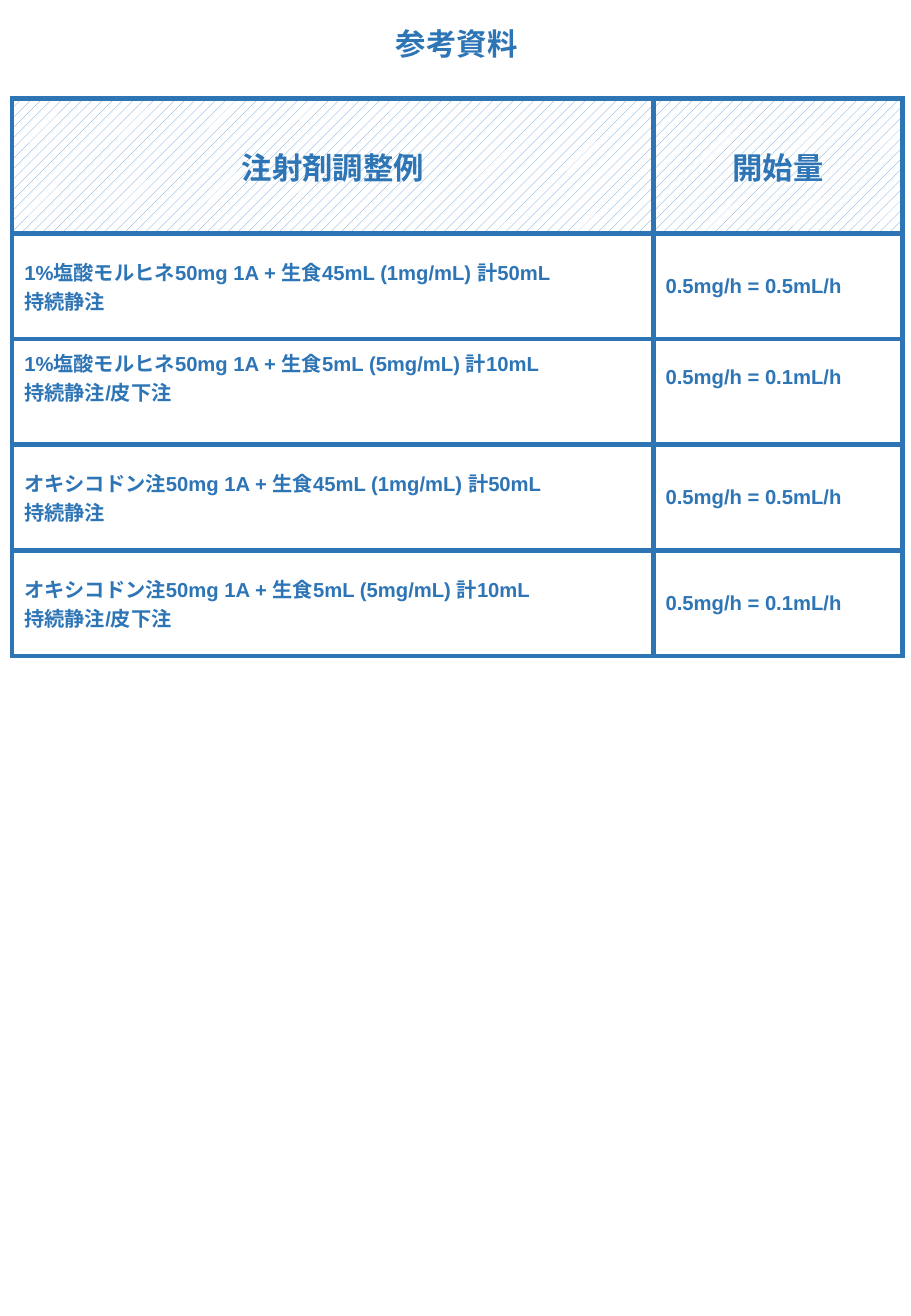
from dataclasses import dataclass

from lxml.etree import SubElement
from pptx import Presentation
from pptx.dml.color import RGBColor
from pptx.enum.dml import MSO_PATTERN
from pptx.enum.lang import MSO_LANGUAGE_ID
from pptx.enum.text import MSO_ANCHOR, PP_ALIGN
from pptx.oxml.ns import qn
from pptx.table import _Cell
from pptx.text.text import TextFrame
from pptx.util import Inches, Pt

COLORS = {"blue": "2E75B6", "hatch": "5B9BD5", "white": "FFFFFF"}
COLUMN_WIDTHS = (5.28, 2.05)
HEADER_HEIGHT, DOSE_HEIGHT = 1.11, 0.87
HEADINGS = ("注射剤調整例", "開始量")


@dataclass(frozen=True)
class Dosing:
    mixture: str
    route: str
    start: str
    bottom_margin: float = 0.05


DOSINGS = (
    Dosing("1%塩酸モルヒネ50mg 1A + 生食45mL (1mg/mL) 計50mL",
           "持続静注", "0.5mg/h = 0.5mL/h"),
    Dosing("1%塩酸モルヒネ50mg 1A + 生食5mL (5mg/mL) 計10mL",
           "持続静注/皮下注", "0.5mg/h = 0.1mL/h", bottom_margin=0.29),
    Dosing("オキシコドン注50mg 1A + 生食45mL (1mg/mL) 計50mL",
           "持続静注", "0.5mg/h = 0.5mL/h"),
    Dosing("オキシコドン注50mg 1A + 生食5mL (5mg/mL) 計10mL",
           "持続静注/皮下注", "0.5mg/h = 0.1mL/h"),
)


def rgb(name: str) -> RGBColor:
    return RGBColor.from_string(COLORS[name])


def write(frame: TextFrame, *lines: str, size: float = 12, font: str = "Arial",
          align: PP_ALIGN = PP_ALIGN.LEFT) -> None:
    """Fill the frame with one bold blue paragraph per line."""
    for number, line in enumerate(lines):
        paragraph = frame.add_paragraph() if number else frame.paragraphs[0]
        paragraph.alignment = align
        run = paragraph.add_run()
        run.text = line
        run.font.name = font
        run.font.size = Pt(size)
        run.font.bold = True
        run.font.color.rgb = rgb("blue")
        run.font.language_id = MSO_LANGUAGE_ID.JAPANESE


def add_borders(cell: _Cell, width: float = 3) -> None:
    properties = cell._tc.get_or_add_tcPr()
    for position, side in enumerate(("lnL", "lnR", "lnT", "lnB")):
        border = SubElement(properties, qn(f"a:{side}"), w=str(Pt(width)))
        fill = SubElement(border, qn("a:solidFill"))
        SubElement(fill, qn("a:srgbClr"), val=COLORS["blue"])
        properties.insert(position, border)


def hatch(cell: _Cell) -> None:
    cell.fill.patterned()
    cell.fill.pattern = MSO_PATTERN.PERCENT_20
    cell.fill.fore_color.rgb = rgb("hatch")
    cell.fill.back_color.rgb = rgb("white")


def main() -> None:
    deck = Presentation()
    deck.slide_width, deck.slide_height = Inches(7.5), Inches(10.83)
    slide = deck.slides.add_slide(deck.slide_layouts[6])

    heights = (HEADER_HEIGHT, *[DOSE_HEIGHT] * len(DOSINGS))
    table = slide.shapes.add_table(
        len(heights), len(COLUMN_WIDTHS), Inches(0.1), Inches(0.81),
        Inches(sum(COLUMN_WIDTHS)), Inches(sum(heights))).table
    table.first_row = table.horz_banding = False
    for column, width in zip(table.columns, COLUMN_WIDTHS):
        column.width = Inches(width)
    for row, height in zip(table.rows, heights):
        row.height = Inches(height)

    for column, heading in enumerate(HEADINGS):
        cell = table.cell(0, column)
        write(cell.text_frame, heading, size=18, font="Calibri", align=PP_ALIGN.CENTER)
        hatch(cell)
    for row, dosing in enumerate(DOSINGS, start=1):
        for column, lines in enumerate(((dosing.mixture, dosing.route), (dosing.start,))):
            cell = table.cell(row, column)
            write(cell.text_frame, *lines)
            cell.margin_bottom = Inches(dosing.bottom_margin)
            cell.fill.background()
    for cell in table.iter_cells():
        cell.vertical_anchor = MSO_ANCHOR.MIDDLE
        add_borders(cell)

    title = slide.shapes.add_textbox(Inches(0.41), Inches(0.16), Inches(6.7), Inches(0.4))
    title.text_frame.word_wrap = True
    write(title.text_frame, "参考資料", size=18, align=PP_ALIGN.CENTER)

    deck.save("out.pptx")


if __name__ == "__main__":
    main()
